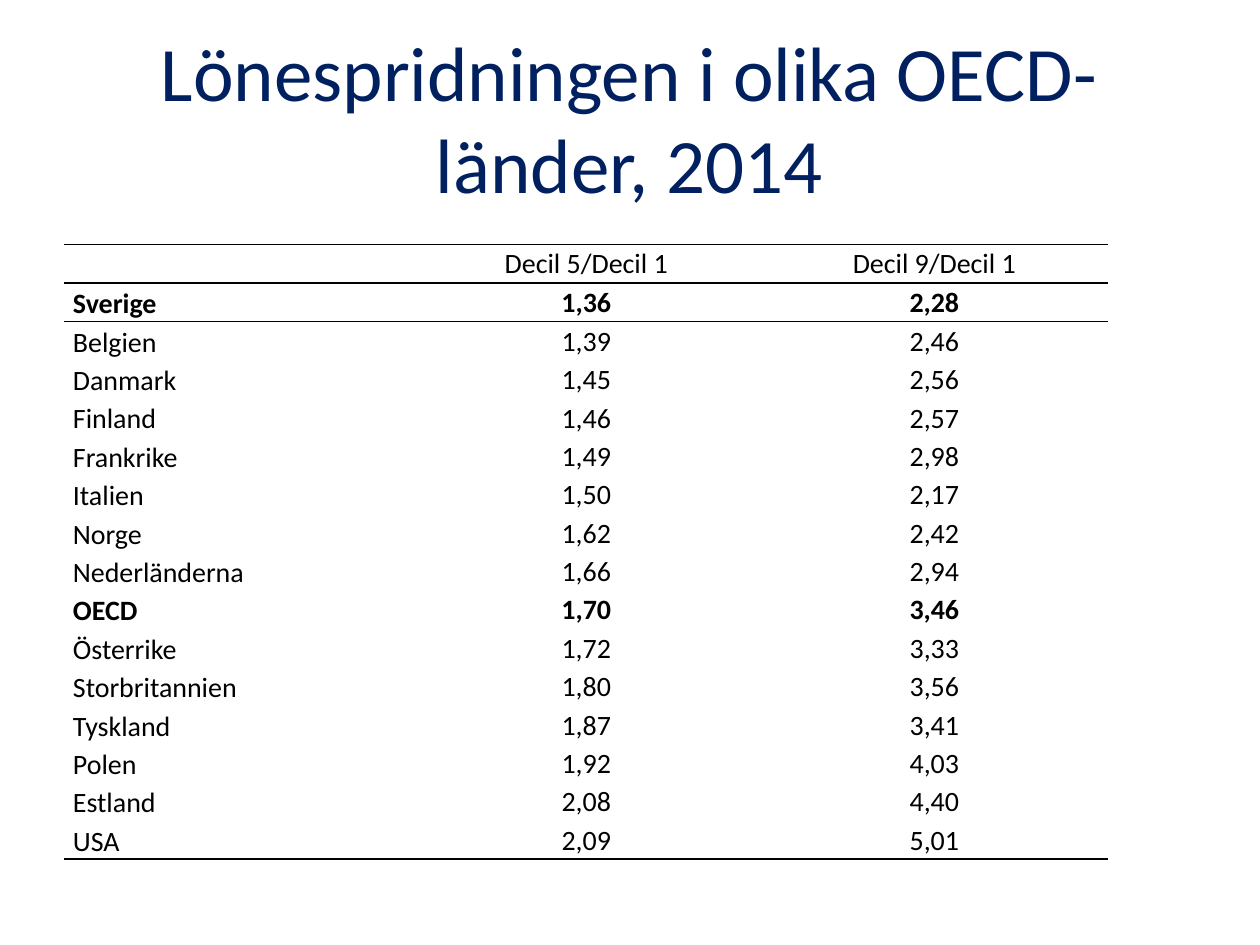
from lxml import etree
from pptx import Presentation
from pptx.dml.color import RGBColor
from pptx.enum import text
from pptx.oxml import ns
from pptx.util import Pt

NAVY = RGBColor(0x00, 0x20, 0x60)
BLACK = RGBColor(0x00, 0x00, 0x00)
WHITE = RGBColor(0xFF, 0xFF, 0xFF)
NO_GRID_STYLE = "{2D5ABB26-0587-4C30-8999-92F81FD0307C}"

HEADER = ("", "Decil 5/Decil 1", "Decil 9/Decil 1")
WAGE_SPREAD = [
    ("Sverige", "1,36", "2,28"),
    ("Belgien", "1,39", "2,46"),
    ("Danmark", "1,45", "2,56"),
    ("Finland", "1,46", "2,57"),
    ("Frankrike", "1,49", "2,98"),
    ("Italien", "1,50", "2,17"),
    ("Norge", "1,62", "2,42"),
    ("Nederländerna", "1,66", "2,94"),
    ("OECD", "1,70", "3,46"),
    ("Österrike", "1,72", "3,33"),
    ("Storbritannien", "1,80", "3,56"),
    ("Tyskland", "1,87", "3,41"),
    ("Polen", "1,92", "4,03"),
    ("Estland", "2,08", "4,40"),
    ("USA", "2,09", "5,01"),
]
HIGHLIGHTED = {"Sverige", "OECD"}


class SlideBuilder:
    font = "Calibri"
    title_size = Pt(44)
    table_size = Pt(16)

    def __init__(self, slide):
        self.slide = slide

    def style(self, p, size, color, align, bold=False):
        p.alignment = align
        p.font.name = self.font
        p.font.size = size
        p.font.bold = bold
        p.font.color.rgb = color

    def title(self, x, y, w, h, words):
        tf = self.slide.shapes.add_textbox(Pt(x), Pt(y), Pt(w), Pt(h)).text_frame
        tf.word_wrap = True
        tf.vertical_anchor = text.MSO_ANCHOR.MIDDLE
        p = tf.paragraphs[0]
        p.text = words
        self.style(p, self.title_size, NAVY, text.PP_ALIGN.CENTER)

    def border(self, cell, *sides):
        """Rule the given sides of a cell, named lnT or lnB, in that order."""
        tc_pr = cell._tc.get_or_add_tcPr()
        for i, side in enumerate(sides):
            ln = etree.Element(ns.qn(f"a:{side}"), w=str(Pt(1)))
            fill = etree.SubElement(ln, ns.qn("a:solidFill"))
            etree.SubElement(fill, ns.qn("a:srgbClr"), val=str(BLACK))
            tc_pr.insert(i, ln)

    def cell(self, cell, value, align, anchor, bold):
        cell.fill.solid()
        cell.fill.fore_color.rgb = WHITE
        cell.margin_left = cell.margin_right = Pt(5)
        cell.margin_top = cell.margin_bottom = 0
        cell.vertical_anchor = anchor
        p = cell.text_frame.paragraphs[0]
        p.text = value
        p.line_spacing = 1.07
        p.space_after = Pt(8)
        self.style(p, self.table_size, BLACK, align, bold)
        if not value:
            etree.SubElement(p._p, ns.qn("a:endParaRPr"), sz=str(self.table_size.centipoints))

    def table(self, x, y, w, h, rows):
        last = len(rows) - 1
        frame = self.slide.shapes.add_table(len(rows), len(rows[0]), Pt(x), Pt(y), Pt(w), Pt(h))
        table = frame.table
        table.first_row = table.horz_banding = False
        table._tbl.tblPr.find(ns.qn("a:tableStyleId")).text = NO_GRID_STYLE
        for i, row in enumerate(rows):
            for j, value in enumerate(row):
                cell = table.cell(i, j)
                align = text.PP_ALIGN.CENTER if j else text.PP_ALIGN.LEFT
                if i == 0:
                    anchor = text.MSO_ANCHOR.TOP
                else:
                    anchor = text.MSO_ANCHOR.MIDDLE if j else text.MSO_ANCHOR.BOTTOM
                self.cell(cell, value, align, anchor, row[0] in HIGHLIGHTED)
                if i == 0:
                    self.border(cell, "lnT", "lnB")
                elif i == 1:
                    self.border(cell, "lnT")
                elif i == last:
                    self.border(cell, "lnB")


def main():
    prs = Presentation()
    prs.slide_width, prs.slide_height = Pt(720), Pt(540)
    s = SlideBuilder(prs.slides.add_slide(prs.slide_layouts[6]))
    s.title(36, 21.6, 647.5, 90, "Lönespridningen i olika OECD-länder, 2014")
    s.table(36.7, 139.7, 596.7, 351.4, [HEADER, *WAGE_SPREAD])
    prs.save("out.pptx")


if __name__ == "__main__":
    main()
